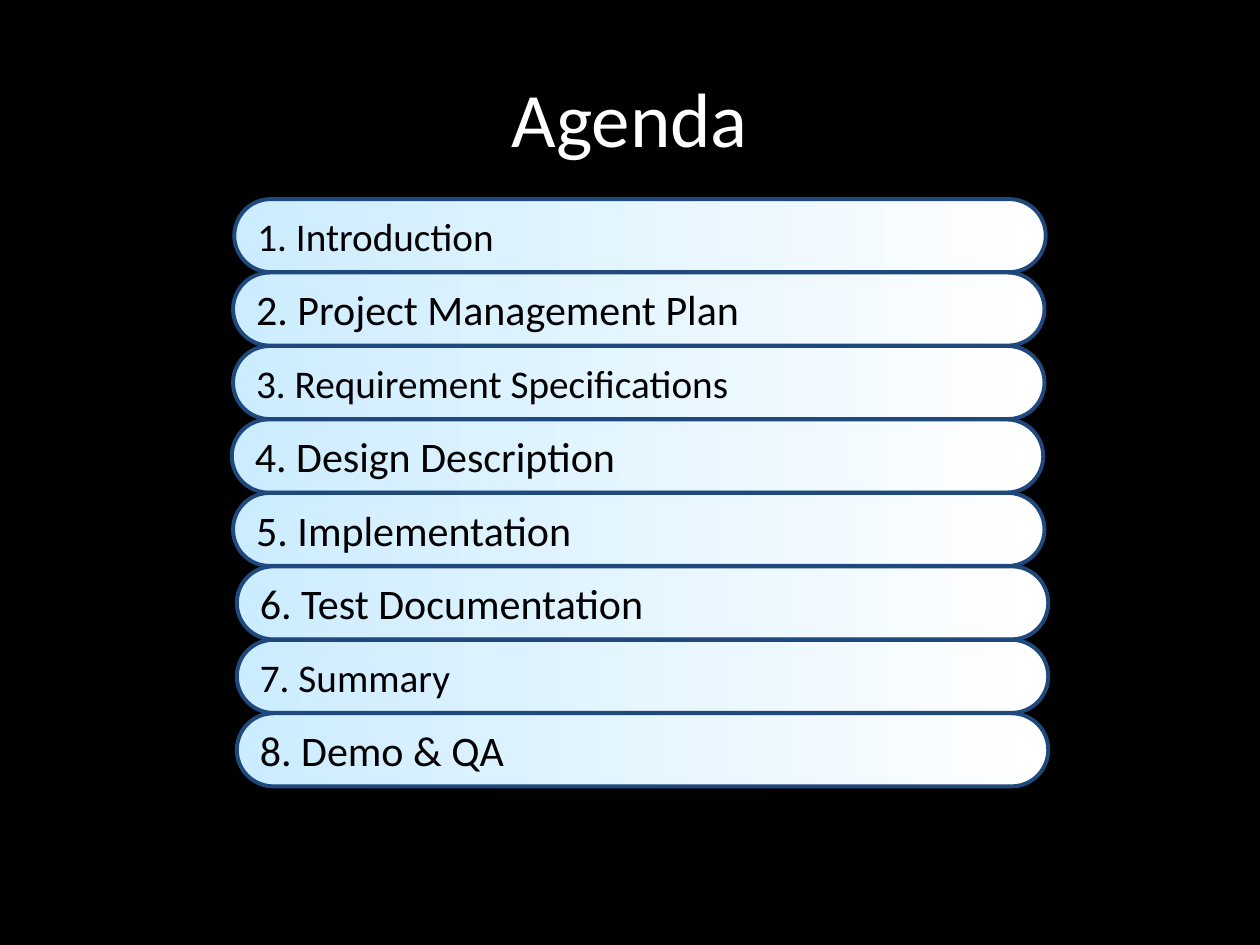
import dataclasses

import pptx
import pptx.dml.color
import pptx.enum.shapes
import pptx.enum.text
import pptx.util

Inches = pptx.util.Inches
Pt = pptx.util.Pt
RGBColor = pptx.dml.color.RGBColor
PP_ALIGN = pptx.enum.text.PP_ALIGN


@dataclasses.dataclass(frozen=True)
class Theme:
    font: str = "Calibri"
    background: RGBColor = RGBColor.from_string("000000")
    title_color: RGBColor = RGBColor.from_string("FFFFFF")
    item_color: RGBColor = RGBColor.from_string("000000")
    bar_start: RGBColor = RGBColor.from_string("CCECFF")
    bar_end: RGBColor = RGBColor.from_string("FFFFFF")
    bar_outline: RGBColor = RGBColor.from_string("1F497D")
    outline_width: float = 2.25
    title_size: float = 44
    item_size: float = 24
    small_item_size: float = 22.4


THEME = Theme()

BAR_TOP = 1.58
BAR_PITCH = 0.583
BAR_WIDTH = 6.44
BAR_HEIGHT = 0.58

# Left edge, wording and type size of each agenda item
AGENDA = [
    (1.86, "1. Introduction", THEME.small_item_size),
    (1.85, "2. Project Management Plan", THEME.item_size),
    (1.85, "3. Requirement Specifications", THEME.small_item_size),
    (1.84, "4. Design Description", THEME.item_size),
    (1.85, "5. Implementation", THEME.item_size),
    (1.88, "6. Test Documentation", THEME.item_size),
    (1.88, "7. Summary", THEME.small_item_size),
    (1.88, "8. Demo & QA", THEME.item_size),
]


def write_line(frame, wording, size, color, alignment):
    """Put one vertically centred paragraph into a text frame."""
    frame.text = wording
    frame.vertical_anchor = pptx.enum.text.MSO_ANCHOR.MIDDLE
    paragraph = frame.paragraphs[0]
    paragraph.alignment = alignment
    font = paragraph.runs[0].font
    font.name = THEME.font
    font.size = Pt(size)
    font.color.rgb = color


def add_title(slide, wording):
    title = slide.shapes.add_textbox(Inches(0.5), Inches(0.3), Inches(9), Inches(1.25))
    title.text_frame.word_wrap = True
    write_line(title.text_frame, wording, THEME.title_size, THEME.title_color, PP_ALIGN.CENTER)


def add_agenda_bar(slide, left, top, wording, size):
    bar = slide.shapes.add_shape(
        pptx.enum.shapes.MSO_SHAPE.ROUNDED_RECTANGLE,
        Inches(left), Inches(top), Inches(BAR_WIDTH), Inches(BAR_HEIGHT),
    )
    bar.adjustments[0] = 0.5
    bar.shadow.inherit = False
    bar.fill.gradient()
    bar.fill.gradient_angle = 0
    for stop, position, color in zip(
        bar.fill.gradient_stops, (0, 1), (THEME.bar_start, THEME.bar_end)
    ):
        stop.position = position
        stop.color.rgb = color
    bar.line.color.rgb = THEME.bar_outline
    bar.line.width = Pt(THEME.outline_width)
    bar.text_frame.word_wrap = False
    write_line(bar.text_frame, wording, size, THEME.item_color, PP_ALIGN.LEFT)


def main():
    deck = pptx.Presentation()
    deck.slide_width = Inches(10)
    deck.slide_height = Inches(7.5)
    slide = deck.slides.add_slide(deck.slide_layouts[6])
    slide.background.fill.solid()
    slide.background.fill.fore_color.rgb = THEME.background

    add_title(slide, "Agenda")
    for row, (left, wording, size) in enumerate(AGENDA):
        add_agenda_bar(slide, left, BAR_TOP + row * BAR_PITCH, wording, size)

    deck.save("out.pptx")


if __name__ == "__main__":
    main()
